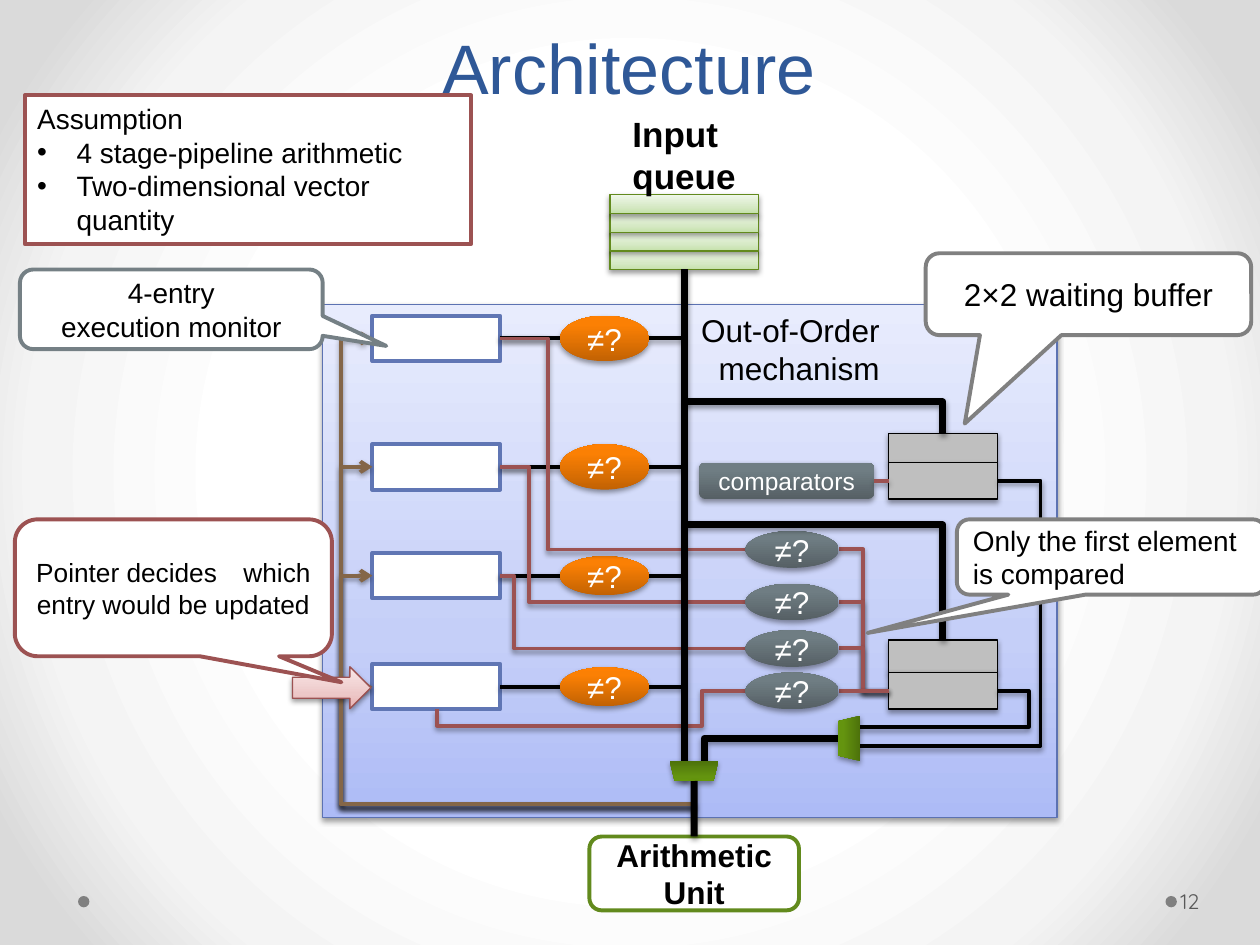
from lxml import etree
from pptx import Presentation
from pptx.dml.color import RGBColor
from pptx.enum.shapes import MSO_CONNECTOR, MSO_SHAPE
from pptx.enum.text import MSO_ANCHOR, PP_ALIGN
from pptx.oxml.ns import qn
from pptx.util import Pt

RECT, OVAL, ROUND = MSO_SHAPE.RECTANGLE, MSO_SHAPE.OVAL, MSO_SHAPE.ROUNDED_RECTANGLE
TRAPEZOID, ARROW = MSO_SHAPE.TRAPEZOID, MSO_SHAPE.RIGHT_ARROW
CALLOUT = MSO_SHAPE.ROUNDED_RECTANGULAR_CALLOUT
STRAIGHT, ELBOW = MSO_CONNECTOR.STRAIGHT, MSO_CONNECTOR.ELBOW
LEFT, CENTER, RIGHT = PP_ALIGN.LEFT, PP_ALIGN.CENTER, PP_ALIGN.RIGHT
TOP, MIDDLE, BOTTOM = MSO_ANCHOR.TOP, MSO_ANCHOR.MIDDLE, MSO_ANCHOR.BOTTOM

BLACK = RGBColor(0, 0, 0)
WHITE = RGBColor(255, 255, 255)
GREY = RGBColor(0x80, 0x80, 0x80)
DARK_GREY = RGBColor(0x59, 0x59, 0x59)
BUFFER_GREY = RGBColor(0xBF, 0xBF, 0xBF)
SLATE = RGBColor(0x75, 0x80, 0x85)
TITLE_BLUE = RGBColor(0x2F, 0x58, 0x97)
PANEL_LINE = RGBColor(0x5C, 0x72, 0xB2)
ENTRY_BLUE = RGBColor(0x60, 0x76, 0xB4)
RED = RGBColor(0x9C, 0x52, 0x52)
GREEN = RGBColor(0x62, 0x8A, 0x1D)
BROWN = RGBColor(0x84, 0x66, 0x48)


def stops(positions, *colors):
    return [(pos, RGBColor.from_string(c)) for pos, c in zip(positions, colors)]


SOFT, DEEP = (0, 35, 100), (0, 80, 100)
BACKDROP = stops((50, 76, 92), "FFFFFF", "F4F4F4", "DADADA")
PANEL_FILL = stops(SOFT, "ADBBF6", "C5CFF8", "E8ECFD")
QUEUE_FILL = stops(SOFT, "C5E1AB", "D6E9C5", "EFF7E9")
POINTER_FILL = stops(SOFT, "E8B0B0", "EDC8C8", "F9E9E9")
ORANGE_FILL = stops(DEEP, "C26203", "FB8004", "FF8002")
SLATE_FILL = stops(DEEP, "566065", "6F7D83", "6F7E84")
GREEN_FILL = stops(DEEP, "4D720B", "64940F", "65970C")

TRUNK_X, OUT_X = 391, 396.6
ENTRY_X, ENTRY_W, ENTRY_H = 212.8, 73, 26
BUFFER_X, BUFFER_W = 507.8, 62.2
CHECK_X, CHECK_W = 426, 53.3
# centre of each entry, height of its check, bend of its wire to a comparator
ENTRIES = [(193.4, 26, 313.2), (266.8, 26, 302.4), (329, 22.3, 293.8), (392.4, 22.3, None)]
COMPARED = [314, 344, 370.6, 394.8]


def add(parent, tag, **attrs):
    return etree.SubElement(parent, qn(tag), {k: str(v) for k, v in attrs.items()})


def paint_gradient(fill, owner, colors):
    """Fill with colors running from bottom to top."""
    fill.gradient()
    fill.gradient_angle = 90
    grad = next(owner.iter(qn("a:gradFill")))
    gs_list = grad.find(qn("a:gsLst"))
    for gs in list(gs_list):
        gs_list.remove(gs)
    for pos, color in colors:
        add(add(gs_list, "a:gs", pos=pos * 1000), "a:srgbClr", val=color)
    return grad


def paint_background(slide):
    grad = paint_gradient(slide.background.fill, slide._element, BACKDROP)
    grad.remove(grad.find(qn("a:lin")))
    add(add(grad, "a:path", path="circle"), "a:fillToRect", l=50000, t=50000, r=50000, b=50000)


def cast_shadow(sp):
    effects = add(sp._element.spPr, "a:effectLst")
    shadow = add(effects, "a:outerShdw", blurRad=Pt(3.1), dist=Pt(1.6), dir=5400000, rotWithShape=0)
    add(add(shadow, "a:srgbClr", val=BLACK), "a:alpha", val=38000)


def write(sp, lines, size, color=BLACK, align=CENTER, anchor=MIDDLE, bold=False, font="Arial"):
    tf = sp.text_frame
    tf.word_wrap = True
    tf.vertical_anchor = anchor
    tf.text = lines
    for p in tf.paragraphs:
        p.alignment = align
        for r in p.runs:
            r.font.size, r.font.name, r.font.bold = Pt(size), font, bold
            r.font.color.rgb = color
    return tf


def shape(slide, kind, box, fill, line=None, width=0.75, shadow=False):
    sp = slide.shapes.add_shape(kind, *map(Pt, box))
    if isinstance(fill, RGBColor):
        sp.fill.solid()
        sp.fill.fore_color.rgb = fill
    else:
        paint_gradient(sp.fill, sp._element, fill)
    if line is None:
        sp.line.fill.background()
    else:
        sp.line.color.rgb = line
        sp.line.width = Pt(width)
    if shadow:
        cast_shadow(sp)
    else:
        sp.shadow.inherit = False
    return sp


def label(slide, box, lines, size, **style):
    return write(slide.shapes.add_textbox(*map(Pt, box)), lines, size, **style)


def callout(slide, box, tip, line, lines, size, align=CENTER):
    sp = shape(slide, CALLOUT, box, WHITE, line, 2.25)
    sp.adjustments[0], sp.adjustments[1] = tip
    write(sp, lines, size, align=align)


def check(slide, x, center_y, w, h, fill):
    write(shape(slide, OVAL, (x, center_y - h / 2, w, h), fill, shadow=True), "≠?", 18, WHITE)


def wire(slide, points, color=BLACK, width=2.25, arrow=False):
    """Connector through right-angled points, leaving the first one horizontally."""
    (x1, y1), (x2, y2) = points[0], points[-1]
    bends = len(points) - 2
    cx = slide.shapes.add_connector(ELBOW if bends else STRAIGHT, *map(Pt, (x1, y1, x2, y2)))
    cx.line.color.rgb = color
    cx.line.width = Pt(width)
    if bends:
        geom = cx._element.spPr.find(qn("a:prstGeom"))
        geom.set("prst", f"bentConnector{bends + 1}")
        guides = geom.find(qn("a:avLst"))
        if guides is None:
            guides = add(geom, "a:avLst")
        if bends > 1:
            ratios = [(points[1][0] - x1) / (x2 - x1)]
            if bends > 2:
                ratios.append((points[2][1] - y1) / (y2 - y1))
            for i, ratio in enumerate(ratios, 1):
                add(guides, "a:gd", name=f"adj{i}", fmla=f"val {round(ratio * 100000)}")
    if arrow:
        add(cx.line._get_or_add_ln(), "a:headEnd", type="arrow")
    cast_shadow(cx)
    return cx


def draw_frame(slide):
    for x in (44.6, 666):
        shape(slide, OVAL, (x, 512, 6.5, 6.5), GREY)
    tf = label(slide, (35.3, 3, 648, 62.5), "Architecture", 40, color=TITLE_BLUE, anchor=BOTTOM)
    tf.paragraphs[0].line_spacing = Pt(58)
    tf = label(slide, (672.5, 500.4, 44, 28.8), "12", 12, color=DARK_GREY, align=LEFT, font="Quicksand")
    tf.margin_left = Pt(2)


def draw_assumption(slide):
    sp = shape(slide, RECT, (14.2, 54.5, 255, 85), WHITE, RED, 2.25)
    tf = write(sp, "Assumption\n4 stage-pipeline arithmetic\nTwo-dimensional vector quantity", 16,
               align=LEFT, anchor=TOP)
    for p in tf.paragraphs[1:]:
        ppr = p._p.get_or_add_pPr()
        ppr.set("marL", str(Pt(22.5)))
        ppr.set("indent", str(-Pt(22.5)))
        add(ppr, "a:buFont", typeface="Arial")
        add(ppr, "a:buChar", char="•")


def draw_queue(slide):
    for i in reversed(range(4)):
        shape(slide, RECT, (348.5, 111.3 + 10.7 * i, 85, 10.7), QUEUE_FILL, GREEN, shadow=True)
    label(slide, (354.3, 60.5, 85, 55.5), "Input\nqueue", 20, align=LEFT, anchor=TOP, bold=True)


def draw_buffer(slide, top, middle, bottom):
    """Two-entry buffer; returns its lower entry."""
    for y, end in ((top, middle), (middle, bottom)):
        sp = shape(slide, RECT, (BUFFER_X, y, BUFFER_W, end - y), BUFFER_GREY, BLACK, 1, True)
    return sp


def draw_monitor(slide):
    for y, check_h, bend in ENTRIES:
        entry = shape(slide, RECT, (ENTRY_X, y - ENTRY_H / 2, ENTRY_W, ENTRY_H), WHITE, ENTRY_BLUE, 2.25)
        right = ENTRY_X + ENTRY_W
        wire(slide, [(right, y), (320, y)]).begin_connect(entry, 3)
        wire(slide, [(371, y), (TRUNK_X, y)])
        check(slide, 320, y, 51, check_h, ORANGE_FILL)
        wire(slide, [(ENTRY_X, y), (194.8, y), (194.8, 459.5), (OUT_X, 459.5)], BROWN, arrow=True)


def draw_comparison(slide, buffer):
    right = ENTRY_X + ENTRY_W
    for (y, _, bend), target in zip(ENTRIES, COMPARED):
        if bend:
            wire(slide, [(right, y), (bend, y), (bend, target), (CHECK_X, target)], RED)
            wire(slide, [(BUFFER_X, COMPARED[-1]), (493.2, COMPARED[-1]), (493.2, target),
                         (CHECK_X + CHECK_W, target)], RED)
        else:
            wire(slide, [(CHECK_X, target), (401, target), (401, 414.7), (249.8, 414.7),
                         (249.8, y + ENTRY_H / 2)], RED)
            wire(slide, [(BUFFER_X, target), (CHECK_X + CHECK_W, target)], RED).begin_connect(buffer, 1)
        check(slide, CHECK_X, target, CHECK_W, 21, SLATE_FILL)


def draw_trunk(slide, unit):
    wire(slide, [(TRUNK_X, 154), (TRUNK_X, 445.7)], width=4)
    buffer_right = BUFFER_X + BUFFER_W
    for y, bend, target in ((394.8, 587.8, 415.4), (274.8, 594.6, 426.3)):
        wire(slide, [(buffer_right, y), (bend, y), (bend, target), (488, target)])
    wire(slide, [(479, 422), (402.4, 422), (402.4, 436.5)], width=4)
    for box, turn in (((472.3, 415.5, 26, 12.8), 270), ((382.6, 434.7, 28, 11.6), 180)):
        shape(slide, TRAPEZOID, box, GREEN_FILL, shadow=True).rotation = turn
    wire(slide, [(OUT_X, 446.3), (OUT_X, 478)], width=4).end_connect(unit, 0)
    for y, top in ((229.7, 247.7), (300, 365.8)):
        wire(slide, [(TRUNK_X, y), (538.8, y), (538.8, top)], width=4)


def main():
    prs = Presentation()
    prs.slide_width, prs.slide_height = Pt(720), Pt(540)
    slide = prs.slides.add_slide(prs.slide_layouts[6])
    paint_background(slide)
    draw_frame(slide)
    draw_assumption(slide)
    shape(slide, RECT, (184.3, 174.2, 419.8, 293), PANEL_FILL, PANEL_LINE, shadow=True)
    tf = label(slide, (392.4, 174.2, 117.4, 51), "Out-of-Order\nmechanism", 18, align=RIGHT, anchor=TOP)
    tf.word_wrap = False
    unit = shape(slide, ROUND, (336.8, 478, 119.8, 42.2), WHITE, GREEN, 2.25)
    write(unit, "Arithmetic\nUnit", 18, bold=True)
    draw_queue(slide)
    upper = draw_buffer(slide, 247.7, 264.4, 285.2)
    lower = draw_buffer(slide, 365.8, 384.3, 405.3)
    draw_monitor(slide)
    draw_comparison(slide, lower)
    draw_trunk(slide, unit)
    comparators = shape(slide, ROUND, (399.6, 264.4, 100, 20.8), SLATE_FILL, shadow=True)
    write(comparators, "comparators", 14, WHITE)
    link = wire(slide, [(BUFFER_X, 274.8), (499.6, 274.8)], RED)
    link.begin_connect(upper, 1)
    link.end_connect(comparators, 3)

    callout(slide, (11.4, 154, 173, 45.5), (0.71, 0.46), SLATE, "4-entry\nexecution monitor", 16)
    shape(slide, ARROW, (167.2, 381, 44.8, 24), POINTER_FILL, RED, shadow=True)
    callout(slide, (8.5, 296.8, 181.2, 78.2), (0.53, 0.69), RED,
            "Pointer decides which entry would be updated".replace("decides ", "decides　"), 15)
    callout(slide, (529, 144.7, 186, 46.8), (-0.38, 1.58), GREY, "2×2 waiting buffer", 18)
    callout(slide, (546.8, 296.8, 176.4, 43), (-0.79, 1.01), GREY,
            "Only the first element is compared", 16, LEFT)
    prs.save("out.pptx")


if __name__ == "__main__":
    main()
